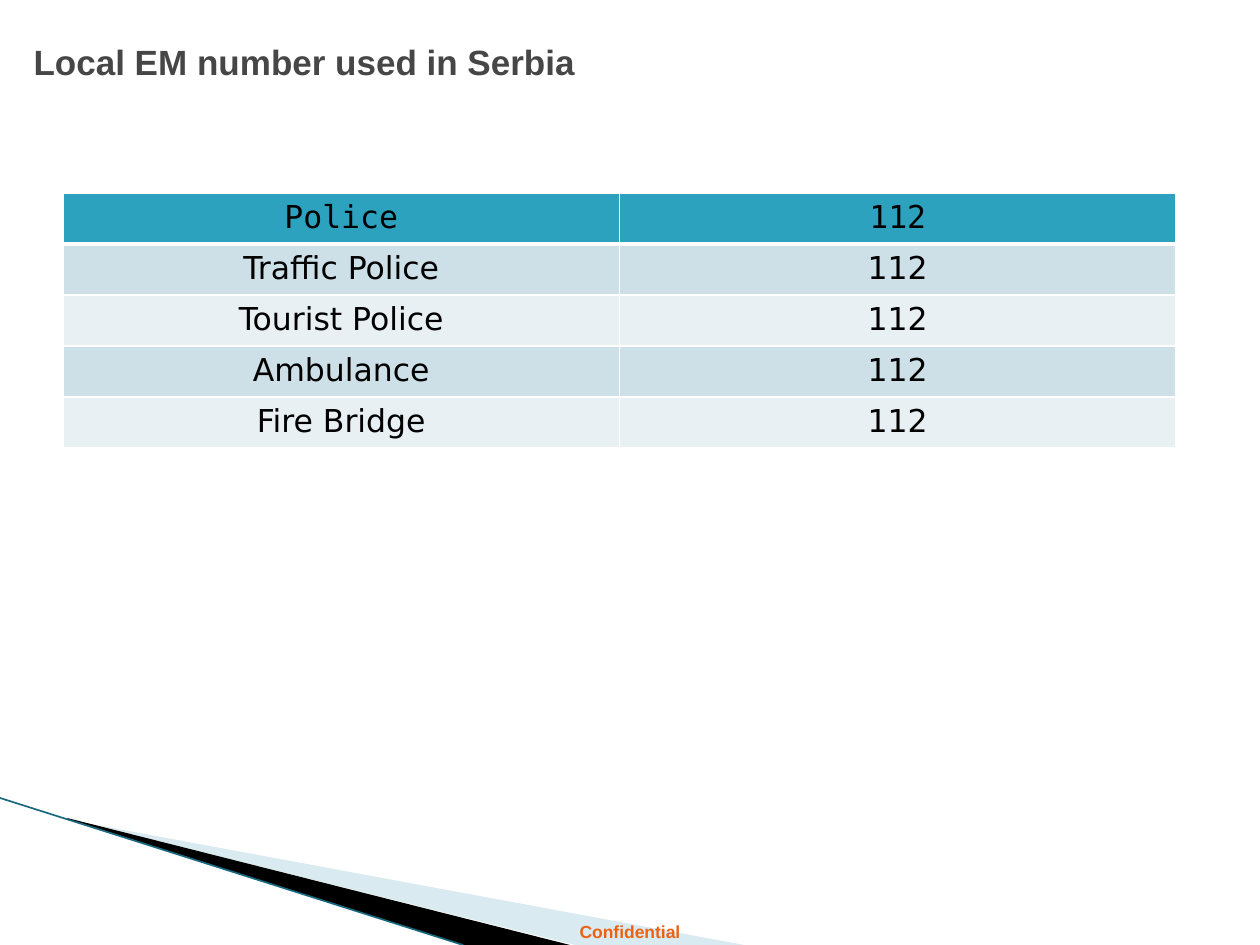
from dataclasses import dataclass

from lxml import etree
from pptx import Presentation
from pptx.dml.color import RGBColor
from pptx.enum import shapes, text
from pptx.oxml import ns
from pptx.util import Pt

SCALE = 914400 / 126


@dataclass(frozen=True)
class Theme:
    """Holds colours, fonts and type sizes."""
    ink: str = "000000"
    title: str = "464646"
    note: str = "EB6312"
    head: str = "2DA2BF"
    bands: tuple = ("CDE0E8", "E8F0F4")
    rule: str = "FFFFFF"
    pale: str = "A0CBDC"
    edge: str = "16697F"
    sans: str = "Arial"
    body: str = "DejaVu Sans"
    mono: str = "DejaVu Sans Mono"
    big: int = 20
    mid: int = 18
    small: int = 10


THEME = Theme()
ROWS = ["Police", "Traffic Police", "Tourist Police", "Ambulance", "Fire Bridge"]
NUMBER = "112"


def px(n):
    """Turn px into EMU."""
    return round(n * SCALE)


def style(para, face, size, color, bold=False):
    """Set the font of a paragraph."""
    font = para.font
    font.name, font.size, font.bold = face, Pt(size), bold
    font.color.rgb = RGBColor.from_string(color)


def child(node, tag, **attrs):
    """Add a drawing element under a node."""
    return etree.SubElement(node, ns.qn(tag), **attrs)


def border(cell, widths):
    """Draw the four borders of a cell."""
    props = cell._tc.get_or_add_tcPr()
    for side, width in zip("LRTB", widths):
        line = child(props, "a:ln" + side, w=str(Pt(width)))
        child(child(line, "a:solidFill"), "a:srgbClr", val=THEME.rule)


def wedge(slide, box, points, color, alpha=None):
    """Draw one filled triangle-like sliver."""
    left, top = box[:2]
    spots = [(left + x, top + y) for x, y in points]
    form = slide.shapes.build_freeform(*spots[0], scale=SCALE)
    form.add_line_segments(spots[1:], close=True)
    shape = form.convert_to_shape()
    shape.shadow.inherit = False
    shape.fill.solid()
    shape.fill.fore_color.rgb = RGBColor.from_string(color)
    shape.line.fill.background()
    if alpha:
        tint = shape._element.spPr.find(".//" + ns.qn("a:srgbClr"))
        child(tint, "a:alpha", val=str(alpha * 1000))


def corner(slide, box):
    """Draw the slivers and the edge line in the lower corner."""
    left, top, wide, high = box
    wedge(slide, box, [(69, 22), (wide, high), (575, high), (69, 21)], THEME.pale, 40)
    wedge(slide, box, [(67, 20), (570, high), (464, high), (68, 21)], THEME.ink)
    line = slide.shapes.add_connector(
        shapes.MSO_CONNECTOR.STRAIGHT,
        px(left), px(top), px(left + 463), px(top + high))
    line.line.color.rgb = RGBColor.from_string(THEME.edge)
    line.line.width = Pt(0.95)
    child(line._element.spPr, "a:effectLst")


def footer(slide, box):
    """Place the centred footer note."""
    frame = slide.shapes.add_textbox(*map(px, box)).text_frame
    frame.word_wrap = True
    para = frame.paragraphs[0]
    para.text = "Confidential"
    para.alignment = text.PP_ALIGN.CENTER
    style(para, THEME.sans, THEME.small, THEME.note, True)


def title(slide, box):
    """Fill and place the title placeholder."""
    shape = slide.shapes.title
    shape.left, shape.top, shape.width, shape.height = map(px, box)
    frame = shape.text_frame
    frame.word_wrap = True
    frame.auto_size = text.MSO_AUTO_SIZE.NONE
    frame.vertical_anchor = text.MSO_ANCHOR.TOP
    frame.margin_top = px(19)
    para = frame.paragraphs[0]
    para.text = "Local EM number used in Serbia"
    para.alignment = text.PP_ALIGN.LEFT
    style(para, THEME.sans, THEME.big, THEME.title, True)


def table(slide, box):
    """Place the table of services and numbers."""
    grid = slide.shapes.add_table(len(ROWS), 2, *map(px, box)).table
    for r, name in enumerate(ROWS):
        fill = THEME.bands[(r - 1) % 2] if r else THEME.head
        face = THEME.body if r else THEME.mono
        widths = (1, 1, 3 if r == 1 else 1, 1 if r else 3)
        for c, word in enumerate((name, NUMBER)):
            cell = grid.cell(r, c)
            border(cell, widths)
            cell.fill.solid()
            cell.fill.fore_color.rgb = RGBColor.from_string(fill)
            para = cell.text_frame.paragraphs[0]
            para.text = word
            para.alignment = text.PP_ALIGN.CENTER
            style(para, face, THEME.mid, THEME.ink)


def main():
    """Build and save the slide."""
    deck = Presentation()
    deck.slide_width, deck.slide_height = px(1260), px(945)
    slide = deck.slides.add_slide(deck.slide_layouts[5])
    corner(slide, (0, 798, 744, 147))
    footer(slide, (0, 915, 1260, 30))
    title(slide, (21, 21, 1134, 252))
    table(slide, (63, 193, 1113, 255))
    deck.save("out.pptx")


if __name__ == "__main__":
    main()
